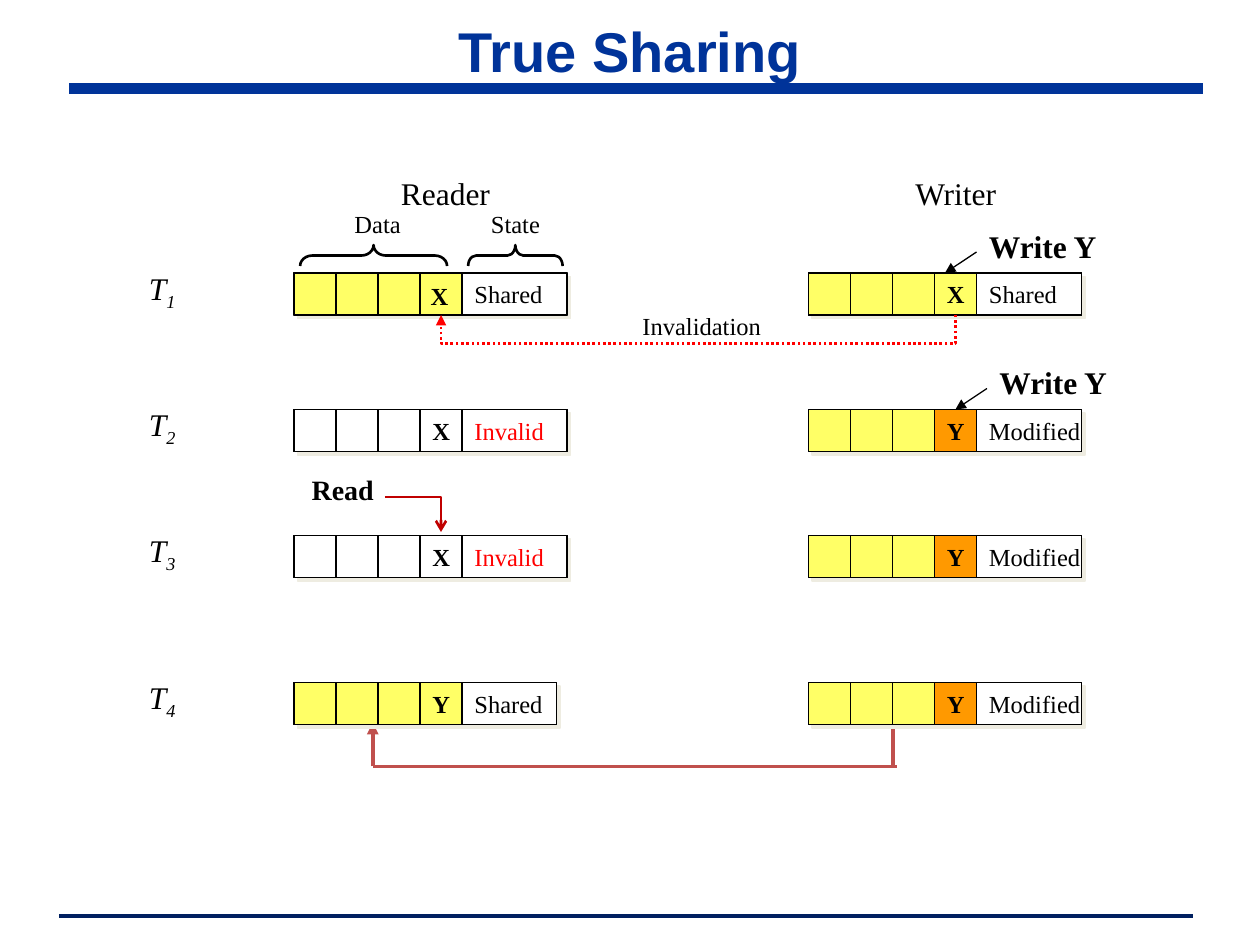
from dataclasses import dataclass
from typing import Any

from lxml.etree import SubElement
from pptx import Presentation
from pptx.dml.color import RGBColor
from pptx.enum.dml import MSO_LINE
from pptx.enum.shapes import MSO_CONNECTOR, MSO_SHAPE
from pptx.enum.text import MSO_ANCHOR, MSO_AUTO_SIZE, PP_ALIGN
from pptx.oxml.ns import qn
from pptx.util import Pt

BLACK, WHITE, RED = "000000", "FFFFFF", "FF0000"
YELLOW, ORANGE, BRICK = "FFFF66", "FF9900", "C0504D"
SIDE, STATE = 24, 60
READER, WRITER = 168, 462
ROWS = (156, 234, 306, 390)


def tint(code):
    return RGBColor.from_string(code)


def apply(item, values):
    for key, value in values.items():
        setattr(item, key, value)


@dataclass
class Board:
    """Draw styled elements on the current slide."""

    slide: Any
    face: str = "Times New Roman"
    size: float = 14
    edge: float = 0.75

    def words(self, frame, text, color=BLACK, sub="", align=PP_ALIGN.LEFT, **form):
        para = frame.paragraphs[0]
        para.alignment = align
        style = {"name": self.face, "size": Pt(self.size)}
        style.update(form)
        for part in filter(None, (text, sub)):
            run = para.add_run()
            run.text = part
            apply(run.font, style)
            run.font.color.rgb = tint(color)
            if part == sub:
                run.font._element.set("baseline", "-25000")

    def label(self, text, x, y, w, h, wrap=False, anchor=MSO_ANCHOR.TOP,
              fit=MSO_AUTO_SIZE.SHAPE_TO_FIT_TEXT, **form):
        frame = self.slide.shapes.add_textbox(Pt(x), Pt(y), Pt(w), Pt(h)).text_frame
        apply(frame, {"word_wrap": wrap, "auto_size": fit, "vertical_anchor": anchor})
        self.words(frame, text, **form)

    def cell(self, x, y, w, fill, text="", shade=False, **form):
        box = self.slide.shapes.add_shape(
            MSO_SHAPE.RECTANGLE, Pt(x), Pt(y), Pt(w), Pt(SIDE))
        box.shadow.inherit = False
        box.fill.solid()
        box.fill.fore_color.rgb = tint(fill)
        box.line.color.rgb = tint(BLACK)
        box.line.width = Pt(self.edge)
        if shade:
            drop = SubElement(box._element.spPr.find(qn("a:effectLst")),
                              qn("a:outerShdw"), dist=str(Pt(2.8)), dir="2700000")
            SubElement(drop, qn("a:srgbClr"), val="EEECE1")
        if text:
            apply(box.text_frame, {"word_wrap": False,
                                   "vertical_anchor": MSO_ANCHOR.MIDDLE})
            self.words(box.text_frame, text, **form)
        return box

    def block(self, x, y, fill, mark, state, last=None, wide=STATE, color=BLACK):
        self.cell(x, y, 4 * SIDE + wide, fill, shade=True)
        for col in range(3):
            self.cell(x + col * SIDE, y, SIDE, fill)
        self.cell(x + 4 * SIDE, y, wide, WHITE, state, color=color)
        return self.cell(x + 3 * SIDE, y, SIDE, last or fill, mark, bold=True)

    def brace(self, mid, y, span, bend):
        deep = 12
        item = self.slide.shapes.add_shape(
            MSO_SHAPE.RIGHT_BRACE, Pt(mid - deep / 2), Pt(y - span / 2),
            Pt(deep), Pt(span))
        item.rotation = 270
        item.adjustments[0] = bend
        item.shadow.inherit = False
        item.fill.background()
        item.line.color.rgb = tint(BLACK)
        item.line.width = Pt(1.5)

    def link(self, start, end, color, width, head="",
             kind=MSO_CONNECTOR.STRAIGHT, dash=None):
        item = self.slide.shapes.add_connector(kind, *map(Pt, start + end))
        item.line.color.rgb = tint(color)
        apply(item.line, {"width": Pt(width), "dash_style": dash})
        if head:
            SubElement(item.line._get_or_add_ln(), qn("a:tailEnd"), type=head)
        SubElement(item._element.spPr, qn("a:effectLst"))
        return item

    def bend(self, start, end, color, head):
        item = self.link(start, end, color, 1.5, head, MSO_CONNECTOR.ELBOW)
        item._element.spPr.find(qn("a:prstGeom")).set("prst", "bentConnector2")

    def loop(self, right, left, y, drop, color, head):
        thin, mid, half = 0.125, (left + right) / 2, (right - left) / 2
        item = self.link((mid, y - half), (mid + thin, y + half), color, 1.5, head,
                         MSO_CONNECTOR.ELBOW, MSO_LINE.ROUND_DOT)
        frame = item._element.spPr
        frame.find(qn("a:xfrm")).set("rot", "5400000")
        shape = frame.find(qn("a:prstGeom"))
        guides = shape.find(qn("a:avLst"))
        if guides is None:
            guides = SubElement(shape, qn("a:avLst"))
        SubElement(guides, qn("a:gd"), name="adj1",
                   fmla=f"val {round(drop / thin * 100000)}")


def main():
    deck = Presentation()
    apply(deck, {"slide_width": Pt(720), "slide_height": Pt(540)})
    board = Board(deck.slides.add_slide(deck.slide_layouts[6]))

    board.link((34, 523.5), (682, 523.5), "002060", 2.25)
    board.link((39.6, 50.6), (687.6, 50.6), "003399", 6)
    board.label("True Sharing", 36, 11.5, 648, 34, wrap=True, fit=MSO_AUTO_SIZE.NONE,
                anchor=MSO_ANCHOR.MIDDLE, align=PP_ALIGN.CENTER, name="Arial",
                size=Pt(32), bold=True, color="003399")

    board.link((510.5, 413), (510.5, 438), BRICK, 2.25)
    board.link((512.5, 438), (213, 438), BRICK, 2.25)
    board.link((213, 438), (213, 413), BRICK, 2.25, "triangle")

    stale = (WHITE, "X", "Invalid", None, STATE, RED)
    dirty = (YELLOW, "Y", "Modified", ORANGE)
    reads = ((YELLOW, "", "Shared"), stale, stale, (YELLOW, "Y", "Shared", None, 54))
    edits = ((YELLOW, "X", "Shared"), dirty, dirty, dirty)
    marks = []
    for step, (y, read, edit) in enumerate(zip(ROWS, reads, edits), 1):
        board.block(READER, y, *read)
        marks.append(board.block(WRITER, y, *edit))
        board.label("T", 78, y - 6, 32.4, 28.8, sub=str(step), size=Pt(18), italic=True)

    for text, x, y, w, bold in (
        ("Reader", 222, 96, 73.4, False),
        ("Writer", 516, 96, 62.6, False),
        ("Write Y", 558, 126, 81.4, True),
        ("Write Y", 564, 204, 81.4, True),
    ):
        board.label(text, x, y, w, 28.8, size=Pt(18), bold=bold)
    for text, x, y, w, bold in (
        ("Data", 195.5, 116, 44, False),
        ("State", 273.5, 116, 47, False),
        ("X", 239, 157, 24, True),
        ("Invalidation", 360, 174, 85, False),
    ):
        board.label(text, x, y, w, 24, bold=bold)
    board.label("Read", 171, 266.5, 84, 26.6, wrap=True, size=Pt(16), bold=True)

    board.brace(213.5, 146, 84, 0.583)
    board.brace(294.5, 146, 54, 0.375)

    board.link((558, 144), (540, 156), BLACK, 0.75, "triangle")
    arrow = board.link((564, 222), (546, 234), BLACK, 0.75, "triangle")
    arrow.end_connect(marks[1], 0)
    board.loop(546, 252, 180, 18, RED, "triangle")
    board.bend((220, 284), (252, 304), "C00000", "arrow")

    deck.save("out.pptx")


if __name__ == "__main__":
    main()
